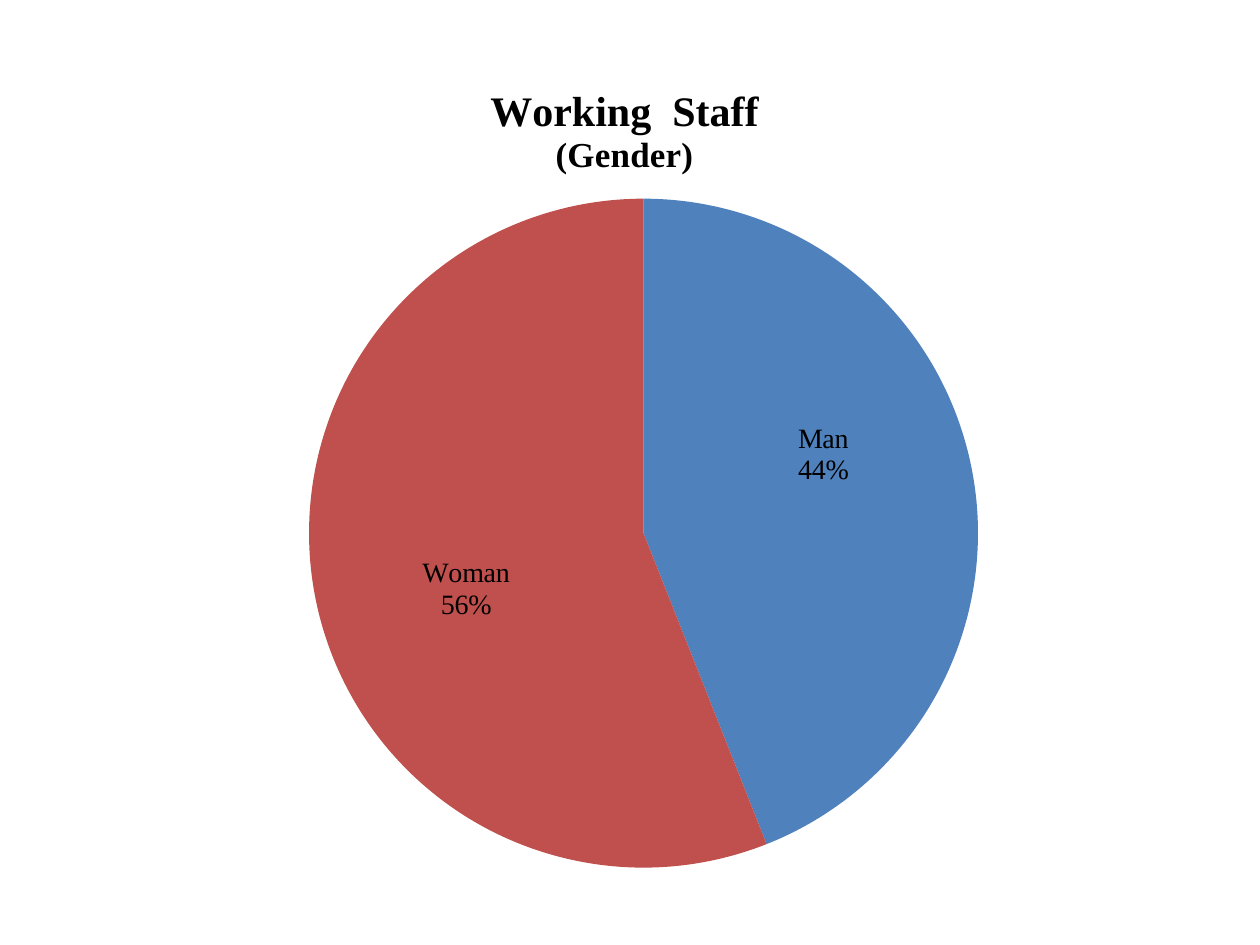
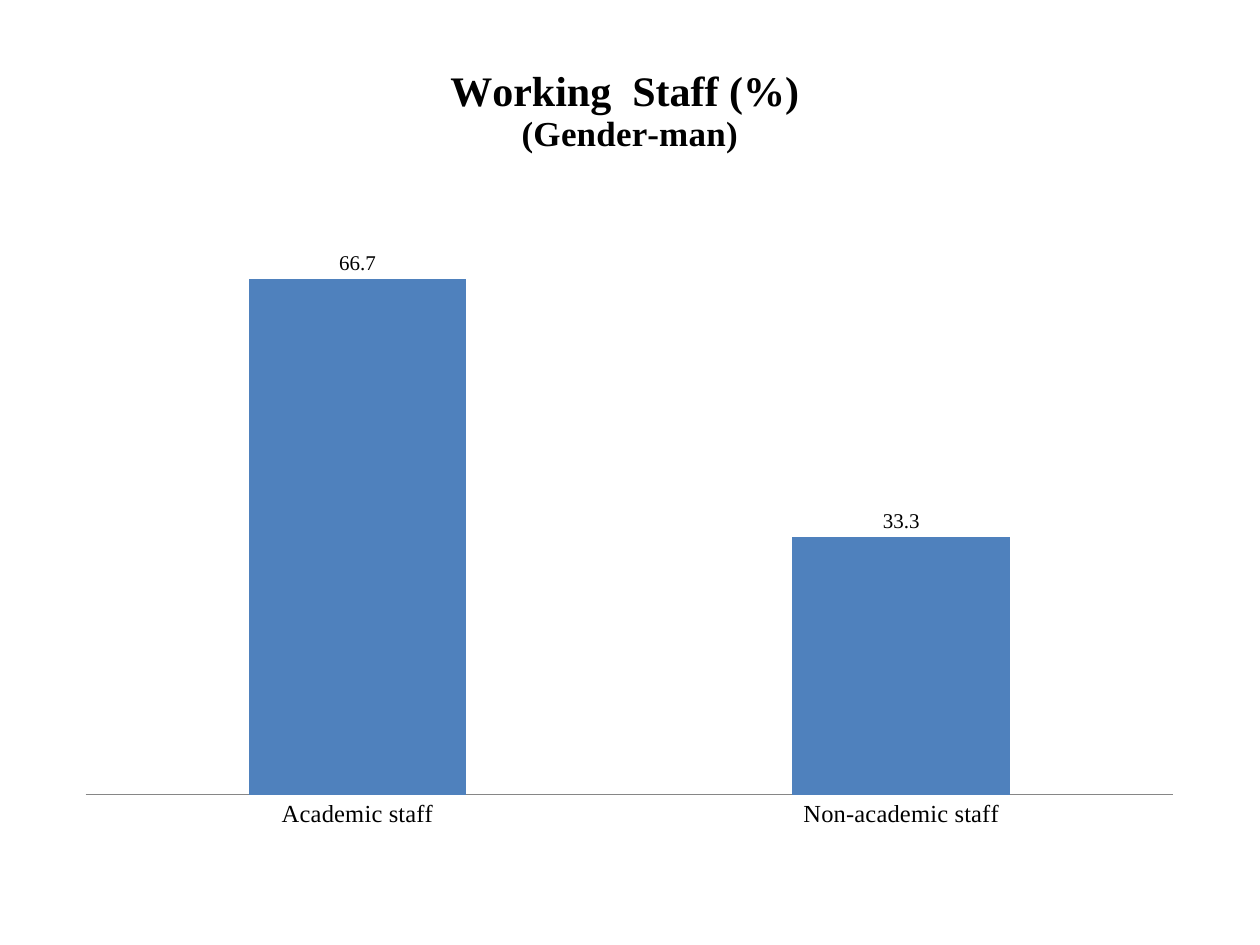
from lxml import etree
from pptx import Presentation, util as u
from pptx.chart.data import CategoryChartData
from pptx.dml.color import RGBColor
from pptx.enum import chart as ch
from pptx.oxml.ns import qn

# Shared style
PX = u.Inches(1) // 126
SLIDE_SIZE = (1260, 945)
BLACK = RGBColor(0x00, 0x00, 0x00)
BLUE = RGBColor(0x4F, 0x81, 0xBD)
RED = RGBColor(0xC0, 0x50, 0x4D)
GREY = RGBColor(0x86, 0x86, 0x86)
SERIF, BASE_FONT = "Times New Roman", "Calibri"
TITLE_SIZES = (24, 20)

# Content: frames and plots are left, top, width, height on the slide in px
GENDER = {
    "kind": ch.XL_CHART_TYPE.PIE,
    "title": "Working  Staff\n(Gender)",
    "shares": {"Man": 44, "Woman": 56},
    "frame": (29, 59, 1191, 827),
    "plot": (309, 199, 669, 669),
}
SLICE_COLOURS = (BLUE, RED)
LABEL_SHIFTS = ((15, -47), (-13, 25))
MEN_BY_ROLE = {
    "kind": ch.XL_CHART_TYPE.COLUMN_CLUSTERED,
    "title": "Working  Staff (%) \n(Gender-man)",
    "shares": {"Academic staff": 66.7, "Non-academic staff": 33.3},
    "frame": (63, 39, 1134, 805),
    "plot": (86, 177, 1088, 618),
}


def style(font, size, name=SERIF, bold=False):
    font.size, font.name, font.bold = u.Pt(size), name, bold
    font.color.rgb = BLACK


def manual_layout(**settings):
    """Return a c:layout element holding the given settings."""
    layout = etree.Element(qn("c:layout"))
    manual = etree.SubElement(layout, qn("c:manualLayout"))
    for tag, value in settings.items():
        etree.SubElement(manual, qn("c:" + tag), val=str(value))
    return layout


def place_plot(chart, frame, plot):
    """Fix the inner plot area, as fractions of the chart frame."""
    left, top, width, height = frame
    area = chart._chartSpace.chart.plotArea
    for automatic in area.findall(qn("c:layout")):
        area.remove(automatic)
    area.insert(0, manual_layout(
        layoutTarget="inner", xMode="edge", yMode="edge",
        x=round((plot[0] - left) / width, 3), y=round((plot[1] - top) / height, 3),
        w=round(plot[2] / width, 3), h=round(plot[3] / height, 3)))


def add_staff_chart(deck, content):
    """Add a slide with one titled chart and return the chart."""
    slide = deck.slides.add_slide(deck.slide_layouts[6])
    data = CategoryChartData()
    data.categories = list(content["shares"])
    data.add_series("Series 1", list(content["shares"].values()))
    box = [n * PX for n in content["frame"]]
    chart = slide.shapes.add_chart(content["kind"], *box, data).chart
    style(chart.font, 10, BASE_FONT)
    chart.has_legend = False
    chart.has_title = True
    heading = chart.chart_title.text_frame
    heading.text = content["title"]
    for line, size in zip(heading.paragraphs, TITLE_SIZES):
        style(line.runs[0].font, size, bold=True)
    chart.chart_title.include_in_layout = False
    place_plot(chart, content["frame"], content["plot"])
    return chart


def add_gender_slide(deck):
    chart = add_staff_chart(deck, GENDER)
    pie = chart.plots[0]
    pie.vary_by_categories = True
    _, _, width, height = GENDER["frame"]
    for i, (colour, (dx, dy)) in enumerate(zip(SLICE_COLOURS, LABEL_SHIFTS)):
        piece = pie.series[0].points[i]
        piece.format.fill.solid()
        piece.format.fill.fore_color.rgb = colour
        style(piece.data_label.font, 16)
        piece.data_label.position = ch.XL_LABEL_POSITION.CENTER
    # Each label shows category and percentage, shifted from the slice centre
    labels = pie.series[0].data_labels._element.findall(qn("c:dLbl"))
    for label, (dx, dy) in zip(labels, LABEL_SHIFTS):
        label.insert(1, manual_layout(x=round(dx / width, 3), y=round(dy / height, 3)))
        for flag, on in (("showVal", 0), ("showCatName", 1), ("showPercent", 1)):
            label.find(qn("c:" + flag)).set("val", str(on))
        etree.SubElement(label, qn("c:separator")).text = "\n"


def add_men_slide(deck):
    chart = add_staff_chart(deck, MEN_BY_ROLE)
    columns = chart.plots[0]
    columns.vary_by_categories = False
    columns.gap_width, columns.overlap = 150, -25
    fill = columns.series[0].format.fill
    fill.solid()
    fill.fore_color.rgb = BLUE
    # Value labels
    columns.has_data_labels = True
    labels = columns.data_labels
    labels.show_value = True
    labels.position = ch.XL_LABEL_POSITION.OUTSIDE_END
    style(labels.font, 12)
    # Axes
    roles, percent = chart.category_axis, chart.value_axis
    roles.major_tick_mark = ch.XL_TICK_MARK.NONE
    roles.format.line.color.rgb = GREY
    style(roles.tick_labels.font, 14)
    percent.minimum_scale, percent.maximum_scale = 0, 80
    percent.has_major_gridlines = False
    percent.visible = False


def main():
    deck = Presentation()
    deck.slide_width, deck.slide_height = (n * PX for n in SLIDE_SIZE)
    add_gender_slide(deck)
    add_men_slide(deck)
    deck.save("out.pptx")


if __name__ == "__main__":
    main()
